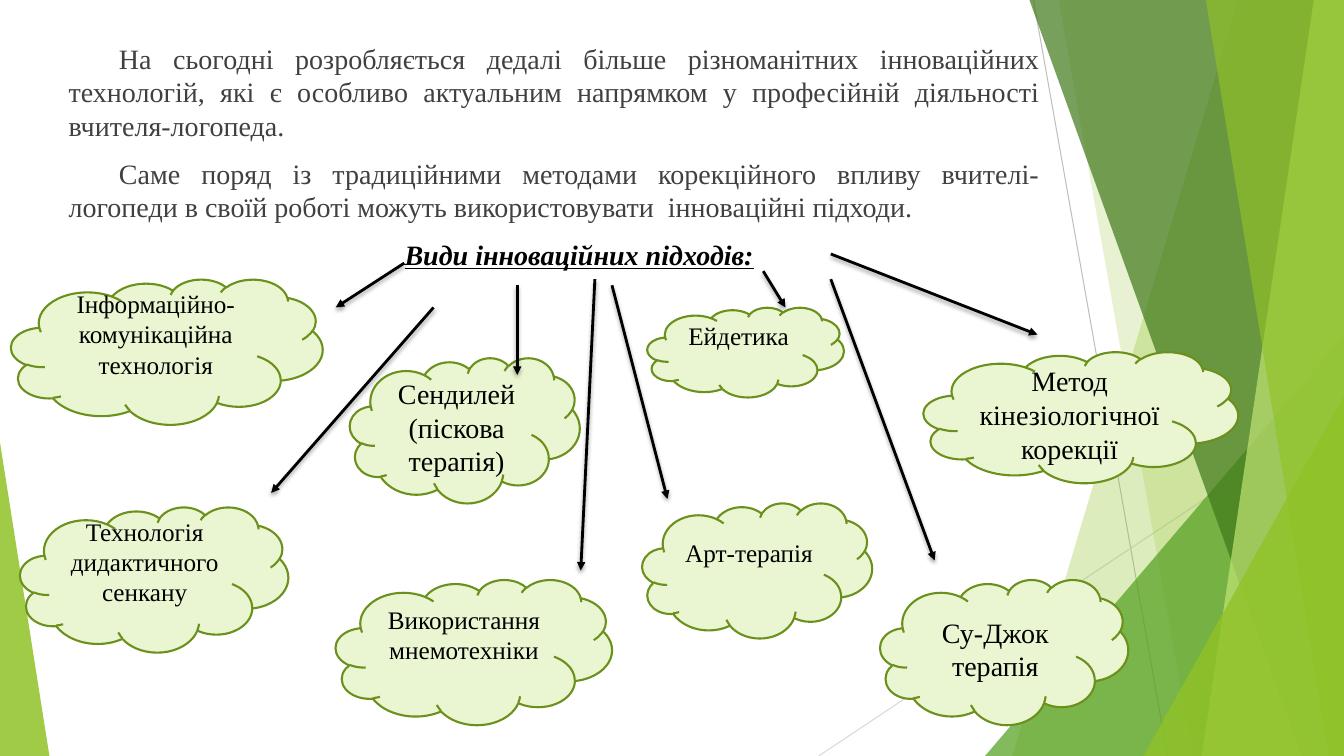
from lxml import etree
from pptx import Presentation
from pptx import util as u
from pptx.dml.color import RGBColor
from pptx.enum import shapes, text
from pptx.oxml import parse_xml
from pptx.oxml.ns import nsdecls, qn

# Content: wording, then left, top, width, height of each cloud
INTRO = [
    "На сьогодні розробляється дедалі більше різноманітних інноваційних технологій, "
    "які є особливо актуальним напрямком у професійній діяльності вчителя-логопеда.",
    "Саме поряд із традиційними методами корекційного впливу вчителі-логопеди "
    "в своїй роботі можуть використовувати  інноваційні підходи.",
]
HEADING = "Види інноваційних підходів:"
LARGE_CLOUDS = [
    ("Метод кінезіологічної корекції", (9.16, 3.49, 3.12, 1.3)),
    ("Су-Джок терапія", (8.73, 5.75, 2.46, 1.44)),
    ("Сендилей (піскова терапія)", (3.47, 3.55, 2.28, 1.44)),
]
RAISED_CLOUDS = [
    ("Арт-терапія", (6.37, 4.99, 2.28, 1.34)),
    ("Використання мнемотехніки", (3.33, 5.75, 2.74, 1.44)),
    ("Ейдетика", (6.42, 3.05, 1.95, 0.89)),
    ("Технологія дидактичного сенкану", (0.2, 5.03, 2.66, 1.44)),
    ("Інформаційно-комунікаційна технологія", (0.11, 2.77, 3.09, 1.44)),
]
ARROWS = [
    (4.3, 3.05, 2.69, 4.89), (6.07, 2.83, 6.62, 4.95),
    (4.01, 2.61, 3.33, 3.05), (8.24, 2.52, 10.29, 3.32),
    (5.13, 2.83, 5.13, 3.72), (7.57, 2.69, 7.79, 3.05),
    (5.9, 2.77, 5.76, 5.66), (8.24, 2.77, 9.27, 5.56),
]
WIDTH, HEIGHT = 13.33, 7.5
THEME = {
    "font": "Times New Roman", "body": 20, "small": 18,
    "text": "404040", "black": "000000", "cloud": "EAF6D1", "edge": "6B901C",
    "lime": "90C226", "green": "54A021", "dark": "3F7819", "pale": "C0E474",
}

# Decoration: hairlines, bands reaching the right edge (top x, bottom x), triangles
HAIRLINES = [((10.25, 0, 11.58, 7.5), "BFBFBF"), ((13.33, 4.03, 8.12, 7.5), "D9D9D9")]
BACK_BANDS = [(12.28, 10.04, "lime", 30), (10.5, 11.83, "lime", 20)]
FRONT_BANDS = [(10.21, 12.91, "dark", 70), (13.03, 11.92, "pale", 70),
               (11.96, 13.18, "lime", 65)]
BACK_TRIANGLES = [((9.77, 3.33, 3.56, 4.17), 1, "green", 72)]
FRONT_TRIANGLES = [((11.34, 3.93, 1.99, 3.57), 1, "lime", 80),
                   ((0, 4.39, 0.49, 3.11), 0, "lime", 85)]

deck = Presentation()
deck.slide_width, deck.slide_height = u.Inches(WIDTH), u.Inches(HEIGHT)
page = deck.slides.add_slide(deck.slide_layouts[1])


def inches(values):
    return [u.Inches(value) for value in values]


def apply(target, **values):
    for name, value in values.items():
        setattr(target, name, value)


def write(para, words, size, color, **style):
    span = para.add_run()
    span.text = words
    apply(span.font, name=THEME["font"], size=u.Pt(size), **style)
    span.font.color.rgb = RGBColor.from_string(color)


def paint(shape, color, opacity):
    shape.shadow.inherit = False
    shape.fill.solid()
    shape.fill.fore_color.rgb = RGBColor.from_string(THEME[color])
    shape.line.fill.background()
    tint = shape.fill._xPr.find(".//" + qn("a:srgbClr"))
    etree.SubElement(tint, qn("a:alpha")).set("val", str(opacity * 1000))


def add_line(ends, color, width):
    line = page.shapes.add_connector(shapes.MSO_CONNECTOR.STRAIGHT, *inches(ends))
    line.line.color.rgb = RGBColor.from_string(color)
    line.line.width = u.Pt(width)
    effects = parse_xml(f"<a:effectLst {nsdecls('a')}/>")
    line._element.spPr.append(effects)
    return line, effects


def add_bands(bands):
    for top, bottom, color, opacity in bands:
        outline = page.shapes.build_freeform(u.Inches(top), 0, scale=1.0)
        corners = [(WIDTH, 0), (WIDTH, HEIGHT), (bottom, HEIGHT)]
        outline.add_line_segments([inches(corner) for corner in corners], close=True)
        paint(outline.convert_to_shape(), color, opacity)


def add_triangles(triangles):
    for place, apex, color, opacity in triangles:
        shape = page.shapes.add_shape(shapes.MSO_SHAPE.ISOSCELES_TRIANGLE, *inches(place))
        shape.adjustments[0] = apex
        paint(shape, color, opacity)


def add_cloud(words, place, size, before=0, bottom=0.05):
    cloud = page.shapes.add_shape(shapes.MSO_SHAPE.CLOUD, *inches(place))
    cloud.shadow.inherit = False
    cloud.fill.solid()
    cloud.fill.fore_color.rgb = RGBColor.from_string(THEME["cloud"])
    cloud.line.color.rgb = RGBColor.from_string(THEME["edge"])
    cloud.line.width = u.Pt(1.5)
    frame = cloud.text_frame
    apply(frame, word_wrap=True, vertical_anchor=text.MSO_ANCHOR.MIDDLE,
          margin_bottom=u.Inches(bottom))
    para = frame.paragraphs[0]
    apply(para, alignment=text.PP_ALIGN.CENTER, space_before=u.Pt(before))
    write(para, words, size, THEME["black"])


# Background decoration
for ends, color in HAIRLINES:
    add_line(ends, color, 0.75)
add_bands(BACK_BANDS)
add_triangles(BACK_TRIANGLES)
add_bands(FRONT_BANDS)
add_triangles(FRONT_TRIANGLES)

# Introduction and heading, in front of the decoration
title, body = page.placeholders
tree = title._element.getparent()
tree.remove(title._element)
tree.append(body._element)
left, top, width, height = inches((0.58, 0.36, 9.83, 6.26))
apply(body, left=left, top=top, width=width, height=height)
frame = body.text_frame
apply(frame, word_wrap=True, auto_size=text.MSO_AUTO_SIZE.NONE,
      vertical_anchor=text.MSO_ANCHOR.TOP)
for number, words in enumerate(INTRO + [HEADING]):
    para = frame.add_paragraph() if number else frame.paragraphs[0]
    apply(para, space_before=u.Pt(10))
    props = para._p.get_or_add_pPr()
    props.set("marL", "0")
    props.set("indent", str(u.Inches(0.5)))
    etree.SubElement(props, qn("a:buNone"))
    if words == HEADING:
        para.alignment = text.PP_ALIGN.CENTER
        write(para, words, THEME["body"], THEME["black"],
              bold=True, italic=True, underline=True)
    else:
        para.alignment = text.PP_ALIGN.JUSTIFY
        write(para, words, THEME["body"], THEME["text"])

# Clouds: the smaller texts sit one line higher
for words, place in LARGE_CLOUDS:
    add_cloud(words, place, THEME["body"], before=10)
for words, place in RAISED_CLOUDS:
    add_cloud(words, place, THEME["small"], bottom=0.34)

# Arrows from the heading to the clouds
for ends in ARROWS:
    arrow, effects = add_line(ends, THEME["black"], 2)
    etree.SubElement(arrow.line._get_or_add_ln(), qn("a:tailEnd")).set("type", "triangle")
    effects.append(parse_xml(
        f'<a:outerShdw {nsdecls("a")} blurRad="{u.Pt(3)}" dist="{u.Pt(2)}" '
        'dir="5400000" rotWithShape="0"><a:srgbClr val="000000">'
        '<a:alpha val="35000"/></a:srgbClr></a:outerShdw>'))

deck.save("out.pptx")
